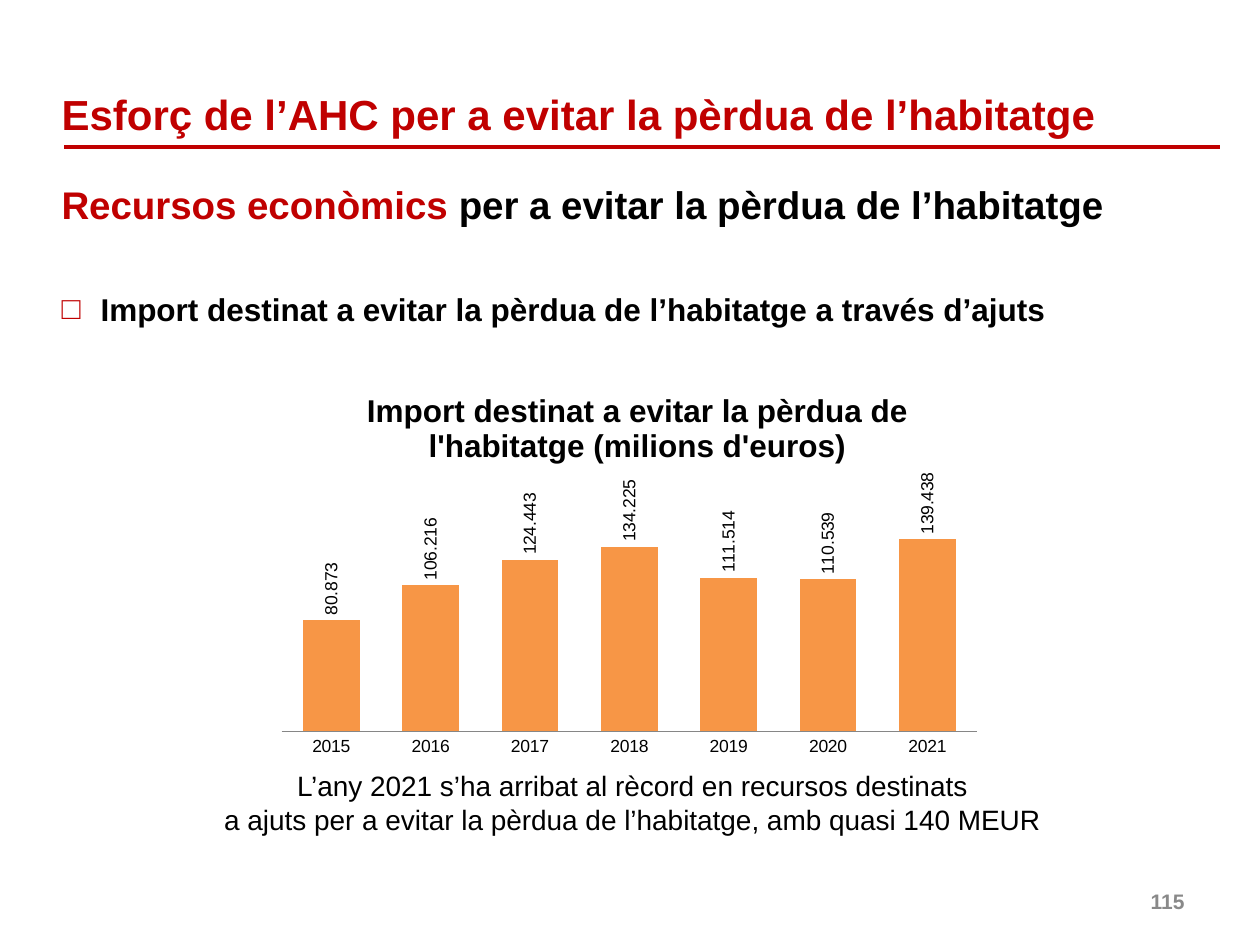
from dataclasses import dataclass

from lxml import etree
from pptx import Presentation
from pptx.chart.data import CategoryChartData
from pptx.dml.color import RGBColor
from pptx.enum.chart import XL_CHART_TYPE, XL_LABEL_POSITION, XL_TICK_MARK
from pptx.enum.shapes import MSO_CONNECTOR
from pptx.enum.text import MSO_ANCHOR, PP_ALIGN
from pptx.oxml.ns import qn
from pptx.util import Pt

COLUMN = XL_CHART_TYPE.COLUMN_CLUSTERED
OUTSIDE_END = XL_LABEL_POSITION.OUTSIDE_END
NO_TICK = XL_TICK_MARK.NONE
STRAIGHT = MSO_CONNECTOR.STRAIGHT
TOP, MIDDLE = MSO_ANCHOR.TOP, MSO_ANCHOR.MIDDLE
LEFT, CENTER, RIGHT = PP_ALIGN.LEFT, PP_ALIGN.CENTER, PP_ALIGN.RIGHT


@dataclass(frozen=True)
class Theme:
    font: str = "Arial"
    red: str = "C00000"
    black: str = "000000"
    gray: str = "898989"
    axis: str = "868686"
    bar: str = "F79646"
    title: int = 24
    subtitle: int = 22
    heading: int = 18
    caption: int = 16
    number: int = 12
    chart: int = 10


THEME = Theme()
TITLE = "Esforç de l’AHC per a evitar la pèrdua de l’habitatge"
SUBTITLE = [
    ("Recursos econòmics ", THEME.red),
    ("per a evitar la pèrdua de l’habitatge", THEME.black),
]
POINT = "Import destinat a evitar la pèrdua de l’habitatge a través d’ajuts"
CHART_TITLE = "Import destinat a evitar la pèrdua de l'habitatge (milions d'euros)"
AMOUNTS = {
    "2015": 80.873,
    "2016": 106.216,
    "2017": 124.443,
    "2018": 134.225,
    "2019": 111.514,
    "2020": 110.539,
    "2021": 139.438,
}
CAPTION = [
    "L’any 2021 s’ha arribat al rècord en recursos destinats",
    "a ajuts per a evitar la pèrdua de l’habitatge, amb quasi 140 MEUR",
]
PAGE = "115"
MARGIN = 28.08


def style(font, size, color=THEME.black, bold=False):
    font.name = THEME.font
    font.size = Pt(size)
    font.bold = bold
    font.color.rgb = RGBColor.from_string(color)


def add_bullet(paragraph, symbol, indent):
    properties = paragraph._p.get_or_add_pPr()
    properties.set("marL", str(Pt(indent)))
    properties.set("indent", str(-Pt(indent)))
    color = etree.SubElement(properties, qn("a:buClr"))
    etree.SubElement(color, qn("a:srgbClr"), val=THEME.red)
    etree.SubElement(properties, qn("a:buFont"), typeface=THEME.font)
    etree.SubElement(properties, qn("a:buChar"), char=symbol)


def add_text(slide, paragraphs, box, size, color=THEME.black, bold=False,
             align=LEFT, anchor=TOP, bullet=None):
    frame = slide.shapes.add_textbox(*map(Pt, box)).text_frame
    frame.word_wrap = True
    frame.vertical_anchor = anchor
    for index, runs in enumerate(paragraphs):
        paragraph = frame.paragraphs[0] if index == 0 else frame.add_paragraph()
        paragraph.alignment = align
        if bullet:
            add_bullet(paragraph, bullet, 22.32)
        for words, tint in [(runs, color)] if isinstance(runs, str) else runs:
            run = paragraph.add_run()
            run.text = words
            style(run.font, size, tint, bold)


def place(element, index, **fractions):
    for old in element.findall(qn("c:layout")):
        element.remove(old)
    layout = etree.Element(qn("c:layout"))
    manual = etree.SubElement(layout, qn("c:manualLayout"))
    if "w" in fractions:
        etree.SubElement(manual, qn("c:layoutTarget"), val="inner")
    for axis in "xy":
        etree.SubElement(manual, qn(f"c:{axis}Mode"), val="edge")
    for key, value in fractions.items():
        etree.SubElement(manual, qn(f"c:{key}"), val=str(value))
    element.insert(index, layout)


def add_rule(slide):
    rule = slide.shapes.add_connector(STRAIGHT, Pt(36.72), Pt(84.24), Pt(696.96), Pt(84.24))
    rule.line.color.rgb = RGBColor.from_string(THEME.red)
    rule.line.width = Pt(2.25)
    etree.SubElement(rule._element.spPr, qn("a:effectLst"))


def add_amounts(slide):
    amounts = CategoryChartData(number_format="#,##0.000")
    amounts.categories = list(AMOUNTS)
    amounts.add_series("Import", list(AMOUNTS.values()))
    box = map(Pt, (152.64, 208.08, 414, 228.24))
    chart = slide.shapes.add_chart(COLUMN, *box, amounts).chart
    style(chart.font, THEME.chart)
    chart.has_legend = False

    chart.has_title = True
    heading = chart.chart_title.text_frame
    heading.text = CHART_TITLE
    style(heading.paragraphs[0].runs[0].font, THEME.heading, bold=True)
    chart.chart_title.include_in_layout = False

    years, scale = chart.category_axis, chart.value_axis
    years.major_tick_mark = NO_TICK
    years.format.line.color.rgb = RGBColor.from_string(THEME.axis)
    years.format.line.width = Pt(1)
    scale.visible = False
    scale.has_major_gridlines = False
    scale.minimum_scale, scale.maximum_scale = 0, 200

    plot = chart.plots[0]
    plot.gap_width, plot.overlap = 75, 40
    plot.vary_by_categories = False
    bars = plot.series[0]
    bars.format.fill.solid()
    bars.format.fill.fore_color.rgb = RGBColor.from_string(THEME.bar)

    labels = bars.data_labels
    labels.show_value = True
    labels.position = OUTSIDE_END
    labels.number_format = "0.000"
    labels.number_format_is_linked = False
    style(labels.font, THEME.chart)
    body = labels._element.find(qn("c:txPr")).find(qn("a:bodyPr"))
    body.set("rot", "-5400000")
    body.set("vert", "horz")

    drawing = chart._chartSpace.find(qn("c:chart"))
    place(drawing.find(qn("c:title")), 1, x=0.13, y=0.05)
    place(drawing.find(qn("c:plotArea")), 0, x=0.02, y=0.23, w=0.96, h=0.69)


def main():
    deck = Presentation()
    deck.slide_width, deck.slide_height = Pt(720), Pt(540)
    slide = deck.slides.add_slide(deck.slide_layouts[6])
    add_rule(slide)
    add_text(slide, [TITLE], (MARGIN, 45.36, 691.92, 39.6), THEME.title,
             color=THEME.red, bold=True, anchor=MIDDLE)
    add_text(slide, [POINT], (MARGIN, 162, 666.72, 323.28), THEME.heading,
             bold=True, bullet="□")
    add_text(slide, [PAGE], (516.24, 500.4, 167.76, 28.8), THEME.number,
             color=THEME.gray, bold=True, align=RIGHT, anchor=MIDDLE)
    add_text(slide, [SUBTITLE], (MARGIN, 100.08, 674.64, 33.84), THEME.subtitle,
             bold=True)
    add_text(slide, CAPTION, (1.44, 435.6, 720, 46.08), THEME.caption, align=CENTER)
    add_amounts(slide)
    deck.save("out.pptx")


if __name__ == "__main__":
    main()
